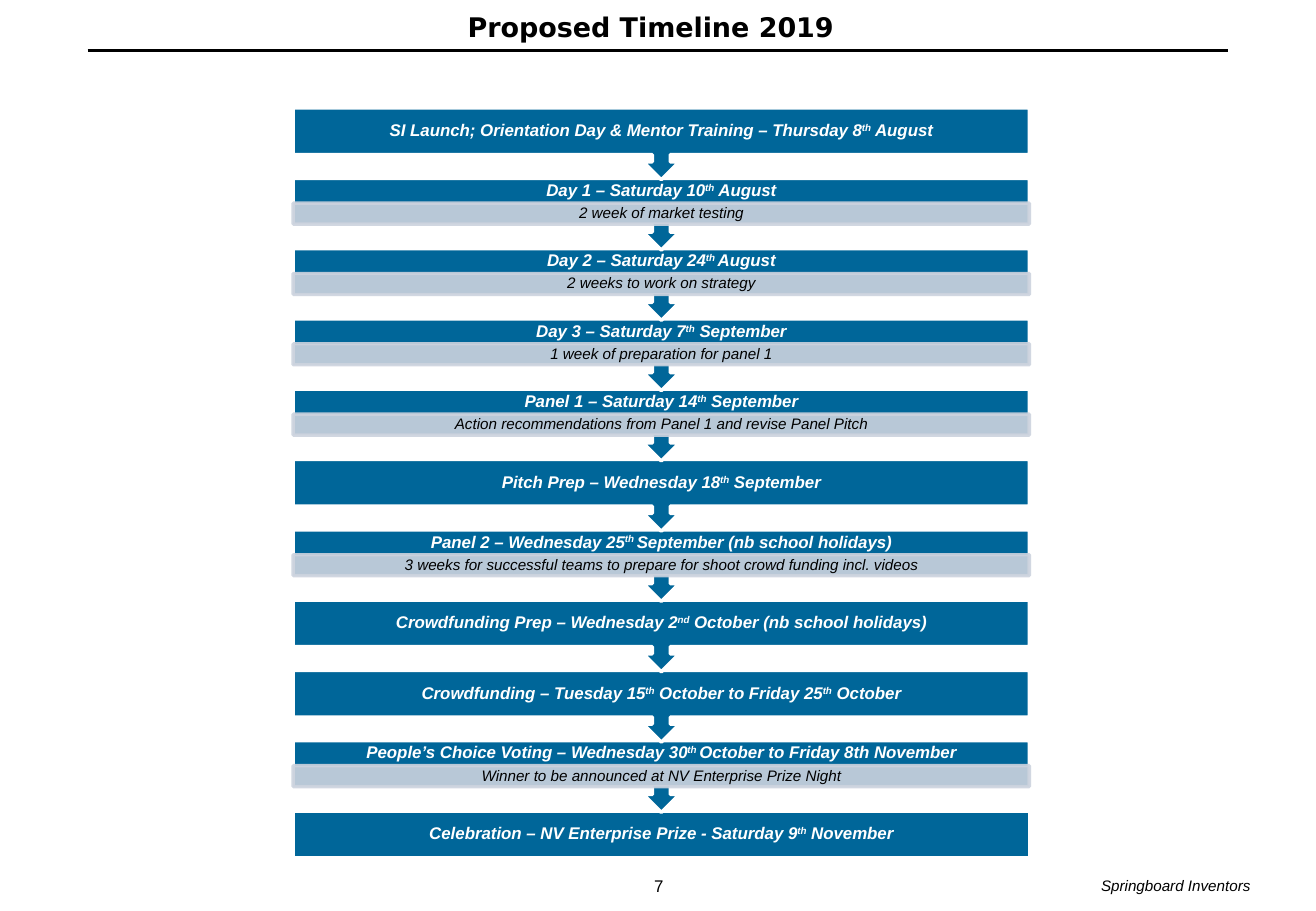
import pptx
import pptx.util
import pptx.dml.color
import pptx.enum.shapes
import pptx.enum.text
import pptx.oxml
import pptx.oxml.ns

Cm = pptx.util.Cm
Pt = pptx.util.Pt
ANCHOR = pptx.enum.text.MSO_ANCHOR
ALIGN = pptx.enum.text.PP_ALIGN
SHAPE = pptx.enum.shapes.MSO_SHAPE

COLOURS = {"step": "006699", "note": "CCD3DE", "white": "FFFFFF", "black": "000000"}

STEPS_LEFT, STEPS_TOP, STEP_WIDTH = 6.13, 2.26, 15.39
STEP_PITCH, CALLOUT_HEIGHT, BOX_HEIGHT = 1.47, 1.5, 0.97
NOTE_OFFSET, NOTE_HEIGHT = 0.52, 0.44

STEPS = [
    ("SI Launch; Orientation Day & Mentor Training – Thursday 8^th^ August", None),
    ("Day 1 – Saturday 10^th^ August", "2 week of market testing"),
    ("Day 2 – Saturday 24^th ^August", "2 weeks to work on strategy"),
    ("Day 3 – Saturday 7^th^ September", "1 week of preparation for panel 1"),
    ("Panel 1 – Saturday 14^th^ September",
     "Action recommendations from Panel 1 and revise Panel Pitch"),
    ("Pitch Prep – Wednesday 18^th^ September", None),
    ("Panel 2 – Wednesday 25^th ^September (nb school holidays)",
     "3 weeks for successful teams to prepare for shoot crowd funding incl. videos"),
    ("Crowdfunding Prep – Wednesday 2^nd^ October (nb school holidays)", None),
    ("Crowdfunding – Tuesday 15^th^ October to Friday 25^th^ October", None),
    ("People’s Choice Voting – Wednesday 30^th ^October to Friday 8th November",
     "Winner to be announced at NV Enterprise Prize Night"),
    ("Celebration – NV Enterprise Prize - Saturday 9^th^ November", None),
]


def rgb(colour):
    return pptx.dml.color.RGBColor.from_string(COLOURS[colour])


def write(frame, text, size, colour, align=ALIGN.CENTER, font="Arial", bold=False, italic=False):
    paragraph = frame.paragraphs[0]
    paragraph.alignment = align
    for index, part in enumerate(text.split("^")):
        run = paragraph.add_run()
        run.text = part
        run.font.name = font
        run.font.size = Pt(size)
        run.font.bold = bold
        run.font.italic = italic
        run.font.color.rgb = rgb(colour)
        if index % 2:
            run._r.get_or_add_rPr().set("baseline", "30000")


def add_label(slide, box, text, size, wrap=True, anchor=ANCHOR.TOP, **style):
    frame = slide.shapes.add_textbox(*map(Cm, box)).text_frame
    frame.word_wrap = wrap
    frame.vertical_anchor = anchor
    write(frame, text, size, "black", **style)


def add_rule(slide, left, right, top):
    rule = slide.shapes.add_connector(
        pptx.enum.shapes.MSO_CONNECTOR.STRAIGHT, Cm(left), Cm(top), Cm(right), Cm(top))
    rule.line.color.rgb = rgb("black")
    rule.line.width = Pt(1.75)
    rule._element.spPr.append(pptx.oxml.parse_xml(
        "<a:effectLst %s/>" % pptx.oxml.ns.nsdecls("a")))


def add_bar(slide, preset, top, height, fill, line):
    bar = slide.shapes.add_shape(
        preset, Cm(STEPS_LEFT), Cm(top), Cm(STEP_WIDTH), Cm(height))
    bar.shadow.inherit = False
    bar.fill.solid()
    bar.fill.fore_color.rgb = rgb(fill)
    bar.line.color.rgb = rgb(line)
    bar.line.width = Pt(2)
    frame = bar.text_frame
    frame.word_wrap = True
    frame.vertical_anchor = ANCHOR.MIDDLE
    frame.margin_top = frame.margin_bottom = 0
    frame.paragraphs[0].line_spacing = 0.9
    return bar


def make_translucent(bar):
    for colour in bar._element.spPr.iter(pptx.oxml.ns.qn("a:srgbClr")):
        colour.append(pptx.oxml.parse_xml(
            '<a:alpha %s val="90000"/>' % pptx.oxml.ns.nsdecls("a")))


def add_step(slide, top, heading, note, is_last):
    preset, height = ((SHAPE.RECTANGLE, BOX_HEIGHT) if is_last
                      else (SHAPE.DOWN_ARROW_CALLOUT, CALLOUT_HEIGHT))
    step = add_bar(slide, preset, top, height, "step", "white")
    write(step.text_frame, heading, 10, "white", bold=True, italic=True)
    if note:
        step.text_frame.margin_bottom = Cm(NOTE_HEIGHT)
        note_bar = add_bar(slide, SHAPE.RECTANGLE, top + NOTE_OFFSET, NOTE_HEIGHT, "note", "note")
        make_translucent(note_bar)
        write(note_bar.text_frame, note, 9, "black", italic=True)


def main():
    presentation = pptx.Presentation()
    presentation.slide_width = Cm(27.51)
    presentation.slide_height = Cm(19.05)
    slide = presentation.slides.add_slide(presentation.slide_layouts[6])

    add_rule(slide, 1.83, 25.68, 1.06)
    add_label(slide, (10.9, 17.58, 5.74, 1.27), "7", 10, wrap=False, anchor=ANCHOR.BOTTOM)
    add_label(slide, (9.04, 18.21, 17.35, 0.64), "Springboard Inventors", 9,
              align=ALIGN.RIGHT, italic=True)
    add_label(slide, (4.93, 0.1, 17.35, 0.94), "Proposed Timeline 2019", 16,
              font="DejaVu Sans", bold=True)

    last = len(STEPS) - 1
    for index, (heading, note) in reversed(list(enumerate(STEPS))):
        add_step(slide, STEPS_TOP + index * STEP_PITCH, heading, note, index == last)

    presentation.save("out.pptx")


if __name__ == "__main__":
    main()
